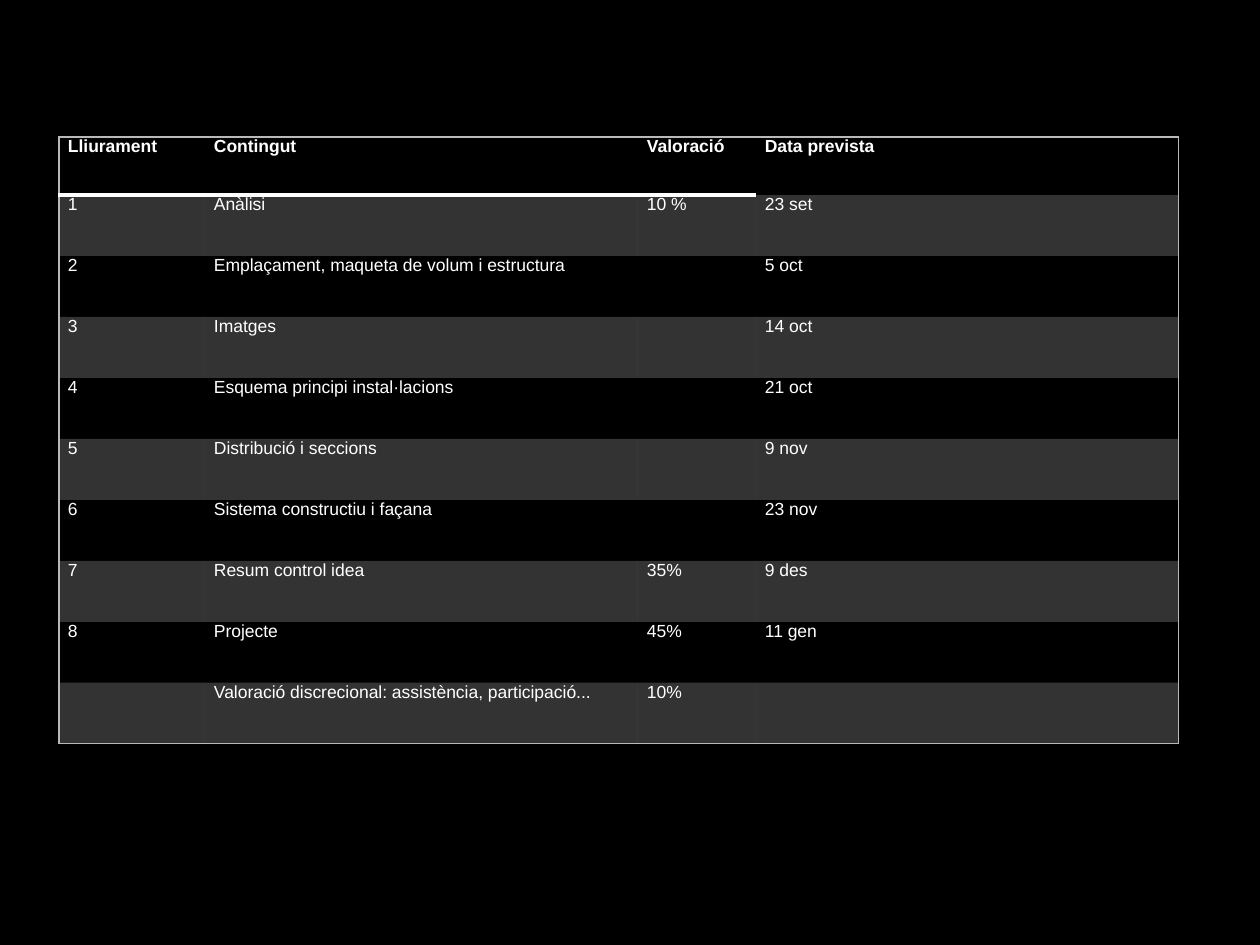
import dataclasses

import lxml.etree
import pptx
import pptx.dml.color
import pptx.oxml
import pptx.oxml.ns
import pptx.util

PX = 914400 / 126
COLOURS = {"background": "000000", "text": "FFFFFF", "band": "FFFFFF",
           "frame": "B9B9B9", "rule": "FFFFFF"}
FONT = "Arial"
BAND_OPACITY = 20
NO_STYLE = "{2D5ABB26-0587-4C30-8999-92F81FD0307C}"
LEFT, TOP = 59, 137
COLUMN_WIDTHS = [146, 433, 118, 423]
HEADER_HEIGHT, ROW_HEIGHT = 58, 61
CELL_INSET = 9


@dataclasses.dataclass
class Delivery:
    number: str
    content: str
    weight: str
    date: str


@dataclasses.dataclass
class Border:
    colour: str
    points: float


HEADER = Delivery("Lliurament", "Contingut", "Valoració", "Data prevista")
DELIVERIES = [
    Delivery("1", "Anàlisi", "10 %", "23 set"),
    Delivery("2", "Emplaçament, maqueta de volum i estructura", "", "5 oct"),
    Delivery("3", "Imatges", "", "14 oct"),
    Delivery("4", "Esquema principi instal·lacions", "", "21 oct"),
    Delivery("5", "Distribució i seccions", "", "9 nov"),
    Delivery("6", "Sistema constructiu i façana", "", "23 nov"),
    Delivery("7", "Resum control idea", "35%", "9 des"),
    Delivery("8", "Projecte", "45%", "11 gen"),
    Delivery("", "Valoració discrecional: assistència, participació...", "10%", ""),
]
FRAME = Border("frame", 0.75)
RULE = Border("rule", 3)


def px(length: int) -> pptx.util.Emu:
    return pptx.util.Emu(round(length * PX))


def colour(name: str) -> pptx.dml.color.RGBColor:
    return pptx.dml.color.RGBColor.from_string(COLOURS[name])


def write_text(cell, text: str, *, size: int = 10, bold: bool = False,
               colour_name: str = "text") -> None:
    cell.margin_left = cell.margin_right = px(CELL_INSET)
    cell.margin_top = cell.margin_bottom = 0
    para = cell.text_frame.paragraphs[0]
    if not text:
        para.font.size = pptx.util.Pt(size)
        return
    span = para.add_run()
    span.text = text
    span.font.name = FONT
    span.font.size = pptx.util.Pt(size)
    span.font.bold = bold
    span.font.color.rgb = colour(colour_name)


def fill_cell(cell, banded: bool) -> None:
    if not banded:
        cell.fill.background()
        return
    cell.fill.solid()
    cell.fill.fore_color.rgb = colour("band")
    shade = cell._tc.tcPr.find(".//" + pptx.oxml.ns.qn("a:srgbClr"))
    alpha = lxml.etree.SubElement(shade, pptx.oxml.ns.qn("a:alpha"))
    alpha.set("val", str(BAND_OPACITY * 1000))


def draw_borders(cell, borders: dict[str, Border]) -> None:
    sides = [side for side in "LRTB" if side in borders]
    for position, side in enumerate(sides):
        border = borders[side]
        line = pptx.oxml.parse_xml(
            f'<a:ln{side} {pptx.oxml.ns.nsdecls("a")} w="{pptx.util.Pt(border.points)}">'
            f'<a:solidFill><a:srgbClr val="{COLOURS[border.colour]}"/></a:solidFill>'
            f'</a:ln{side}>')
        cell._tc.tcPr.insert(position, line)


def cell_borders(row: int, column: int, last_row: int, last_column: int) -> dict[str, Border]:
    borders = {}
    if column == 0:
        borders["L"] = FRAME
    if column == last_column:
        borders["R"] = FRAME
    if row == 0:
        borders["T"] = FRAME
        if column < last_column:
            borders["B"] = RULE
    if row == last_row:
        borders["B"] = FRAME
    return borders


def draw_table(page, deliveries: list[Delivery]) -> None:
    rows = [HEADER, *deliveries]
    heights = [HEADER_HEIGHT] + [ROW_HEIGHT] * len(deliveries)
    frame = page.shapes.add_table(len(rows), len(COLUMN_WIDTHS), px(LEFT), px(TOP),
                                  px(sum(COLUMN_WIDTHS)), px(sum(heights)))
    table = frame.table
    table.first_row = table.horz_banding = False
    table._tbl.tblPr.find(pptx.oxml.ns.qn("a:tableStyleId")).text = NO_STYLE
    for column, width in zip(table.columns, COLUMN_WIDTHS):
        column.width = px(width)
    for row, (delivery, height) in enumerate(zip(rows, heights)):
        table.rows[row].height = px(height)
        for column, text in enumerate(dataclasses.astuple(delivery)):
            cell = table.cell(row, column)
            write_text(cell, text, bold=row == 0)
            fill_cell(cell, banded=row % 2 == 1)
            draw_borders(cell, cell_borders(row, column, len(rows) - 1,
                                            len(COLUMN_WIDTHS) - 1))


def main() -> None:
    deck = pptx.Presentation()
    deck.slide_width, deck.slide_height = px(1260), px(945)
    page = deck.slides.add_slide(deck.slide_layouts[6])
    page.background.fill.solid()
    page.background.fill.fore_color.rgb = colour("background")
    draw_table(page, DELIVERIES)
    deck.save("out.pptx")


if __name__ == "__main__":
    main()
